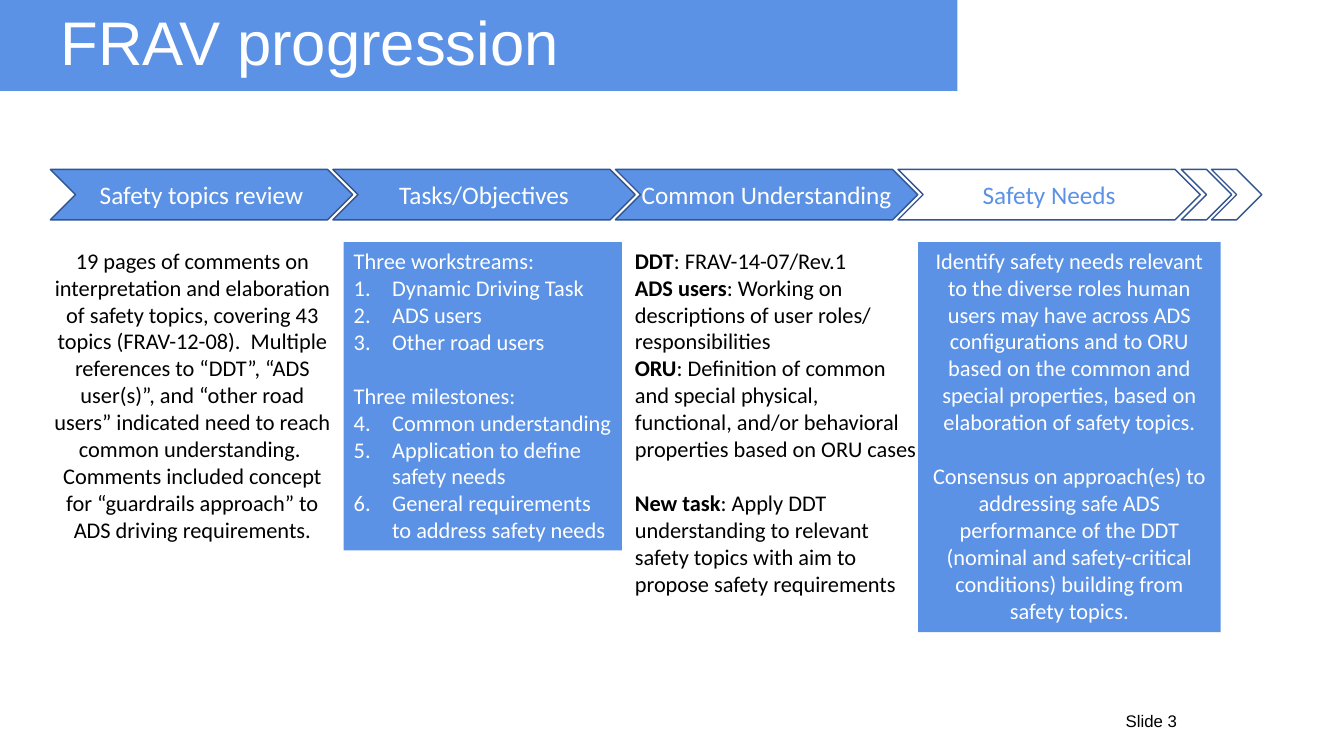
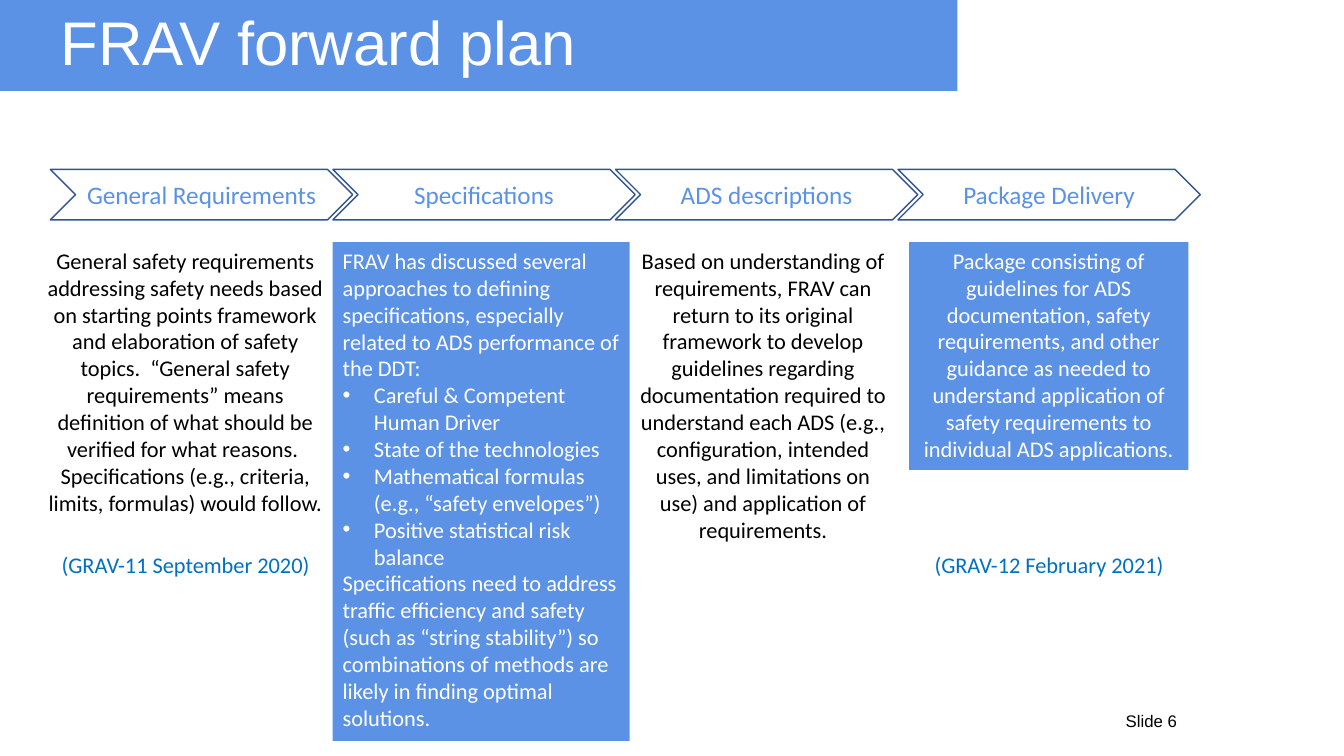
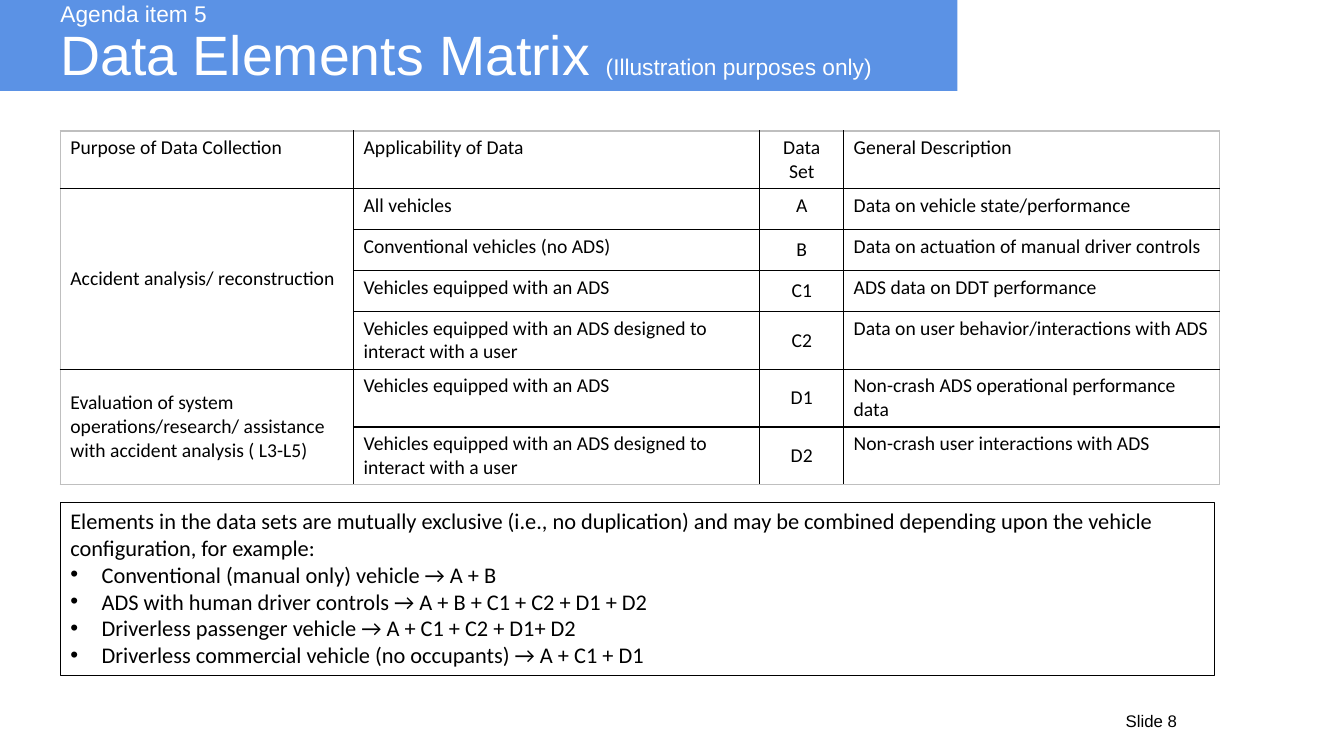
from typing import NamedTuple

from lxml.etree import SubElement
from pptx import Presentation
from pptx.dml.color import RGBColor
from pptx.enum.shapes import MSO_SHAPE
from pptx.enum.text import MSO_ANCHOR, MSO_AUTO_SIZE, PP_ALIGN
from pptx.oxml.ns import qn
from pptx.presentation import Presentation as Deck
from pptx.shapes.autoshape import Shape
from pptx.slide import Slide
from pptx.table import _Cell as Cell
from pptx.text.text import TextFrame, _Paragraph as Para
from pptx.util import Cm, Pt

BLUE, NAVY, AZURE = "5B92E5", "325491", "0070C0"
WHITE, BLACK, GREY = "FFFFFF", "000000", "BFBFBF"
SANS, HUMAN = "Arial", "Calibri"
LEFT, MID = PP_ALIGN.LEFT, PP_ALIGN.CENTER
GAP = 19.5
BREAK = "\n"


class Run(NamedTuple):
    """A stretch of text in one style."""
    text: str
    size: float = 16
    bold: bool = False


class Line(NamedTuple):
    """A paragraph: its runs, list mark and space before in points."""
    runs: tuple[Run, ...]
    mark: str = ""
    gap: float = 0


class Box(NamedTuple):
    """A block of text, placed in centimetres."""
    left: float
    width: float
    height: float
    lines: list[Line]
    fill: str = ""
    ink: str = BLACK
    align: PP_ALIGN = MID
    top: float = 6.1
    edge: str = ""
    wrap: bool = True
    list: bool = False


class Step(NamedTuple):
    """A chevron in the process row."""
    text: str
    done: bool = False


def plain(text: str, mark: str = "", gap: float = 0) -> Line:
    """Make a paragraph of one body run."""
    return Line((Run(text),), mark, gap)


def lead(head: str, text: str, gap: float = 0) -> Line:
    """Make a paragraph with a bold opening."""
    return Line((Run(head, bold=True), Run(text)), gap=gap)


def dots(*texts: str) -> list[Line]:
    """Make a bulleted list."""
    return [plain(text, "•") for text in texts]


def count(start: int, *texts: str) -> list[Line]:
    """Make a numbered list."""
    return [plain(text, str(start)) for text in texts]


def tint(code: str) -> RGBColor:
    """Turn a hex string into a colour."""
    return RGBColor.from_string(code)


def paint(shape: Shape, fill: str = "", edge: str = "", width: float = 1) -> None:
    """Set the fill and outline of a shape."""
    shape.shadow.inherit = False
    if fill:
        shape.fill.solid()
        shape.fill.fore_color.rgb = tint(fill)
    else:
        shape.fill.background()
    if edge:
        shape.line.color.rgb = tint(edge)
        shape.line.width = Pt(width)
    else:
        shape.line.fill.background()


def place(shape: Shape, left: float, top: float, width: float, height: float) -> None:
    """Move and size a shape in centimetres."""
    shape.left, shape.top = Cm(left), Cm(top)
    shape.width, shape.height = Cm(width), Cm(height)


def itemize(para: Para, mark: str) -> None:
    """Give a paragraph its bullet, number or neither."""
    props = para._p.get_or_add_pPr()
    hang = Cm({"": 0, "•": 0.79}.get(mark, 0.97))
    props.set("marL", str(hang))
    props.set("indent", str(-hang))
    if not mark:
        SubElement(props, qn("a:buNone"))
    elif mark == "•":
        SubElement(props, qn("a:buFont"), typeface=SANS)
        SubElement(props, qn("a:buChar"), char=mark)
    else:
        SubElement(props, qn("a:buAutoNum"), type="arabicPeriod", startAt=mark)


def write(frame: TextFrame, lines: list[Line], ink: str, align: PP_ALIGN = LEFT,
          font: str = HUMAN, space: float = 1) -> None:
    """Fill a text frame run by run."""
    for index, line in enumerate(lines):
        para = frame.add_paragraph() if index else frame.paragraphs[0]
        itemize(para, line.mark)
        para.alignment, para.line_spacing = align, space
        para.space_before = Pt(line.gap)
        for text, size, bold in line.runs:
            if text == BREAK:
                para.add_line_break()
                SubElement(para._p[-1], qn("a:rPr"), sz=str(round(size * 100)))
                continue
            run = para.add_run()
            run.text = text
            run.font.name, run.font.size, run.font.bold = font, Pt(size), bold
            run.font.color.rgb = tint(ink)


def settle(frame: TextFrame, anchor: MSO_ANCHOR, wrap: bool = True) -> None:
    """Set how text sits in its frame."""
    frame.auto_size = MSO_AUTO_SIZE.NONE
    frame.word_wrap, frame.vertical_anchor = wrap, anchor


def draw(slide: Slide, box: Box) -> None:
    """Draw a block of text."""
    spot = Cm(box.left), Cm(box.top), Cm(box.width), Cm(box.height)
    if box.list:
        shape = slide.placeholders[1]
        place(shape, box.left, box.top, box.width, box.height)
    elif box.fill:
        shape = slide.shapes.add_shape(MSO_SHAPE.RECTANGLE, *spot)
    else:
        shape = slide.shapes.add_textbox(*spot)
    paint(shape, box.fill, box.edge, 0.75)
    settle(shape.text_frame, MSO_ANCHOR.TOP, box.wrap)
    write(shape.text_frame, box.lines, box.ink, box.align)


def arrow(slide: Slide, left: float, width: float, step: Step) -> None:
    """Draw one chevron."""
    shape = slide.shapes.add_shape(MSO_SHAPE.CHEVRON, Cm(left), Cm(4.27), Cm(width), Cm(1.27))
    paint(shape, BLUE if step.done else WHITE, NAVY)
    if step.text:
        frame = shape.text_frame
        settle(frame, MSO_ANCHOR.MIDDLE)
        frame.margin_left = frame.margin_right = 0
        write(frame, [Line((Run(step.text, 18),))], WHITE if step.done else BLUE, MID)


def chain(slide: Slide, steps: list[Step], tails: int = 0) -> None:
    """Draw the row of chevrons and its short tails."""
    for index, step in enumerate(steps):
        arrow(slide, 1.27 + 7.12 * index, 7.62, step)
    for index in range(tails):
        arrow(slide, 29.77 + 0.76 * index, 1.27, Step(""))


def begin(deck: Deck, number: int, *title: Run) -> Slide:
    """Add a slide with its title and number."""
    slide = deck.slides.add_slide(deck.slide_layouts[1])
    head = slide.shapes.title
    place(head, 1.27, 0.13, 22.35, 2.03)
    settle(head.text_frame, MSO_ANCHOR.MIDDLE)
    write(head.text_frame, [Line(title)], WHITE, LEFT, SANS, 0.9)
    foot = slide.shapes.add_textbox(Cm(28.12), Cm(17.78), Cm(2.08), Cm(0.76))
    settle(foot.text_frame, MSO_ANCHOR.TOP, False)
    write(foot.text_frame, [Line((Run(f"Slide {number}", 12),))], BLACK, font=SANS)
    return slide


def brand(deck: Deck, slide: Slide) -> None:
    """Put the title band on the shared layout."""
    band = slide.shapes.add_shape(MSO_SHAPE.RECTANGLE, 0, 0, Cm(24.13), Cm(2.29))
    paint(band, BLUE)
    deck.slide_layouts[1].shapes._spTree.append(band._element)


def rule(cell: Cell, edges: dict[str, str]) -> None:
    """Set the borders of a cell."""
    props = cell._tc.get_or_add_tcPr()
    for side, code in edges.items():
        line = SubElement(props, qn(f"a:ln{side}"), w=str(Pt(1)))
        SubElement(SubElement(line, qn("a:solidFill")), qn("a:srgbClr"), val=code)


def matrix(slide: Slide, rows: list[tuple[str, ...]], widths: list[float],
           spans: list[tuple[int, int]]) -> None:
    """Draw a ruled table whose first column is merged."""
    tall, wide = len(rows), len(widths)
    frame = slide.shapes.add_table(tall, wide, Cm(1.52), Cm(3.3), Cm(sum(widths)), Cm(1.03 * tall))
    table = frame.table
    table.first_row = table.horz_banding = False
    for col, width in zip(table.columns, widths):
        col.width = Cm(width)
    for first, last in spans:
        table.cell(first, 0).merge(table.cell(last, 0))
    for y, row in enumerate(rows):
        for x, text in enumerate(row):
            cell = table.cell(y, x)
            end = y + (cell.span_height if cell.is_merge_origin else 1)
            outer = {"L": x == 0, "R": x == wide - 1, "T": y == 0, "B": end == tall}
            rule(cell, {side: GREY if out else BLACK for side, out in outer.items()})
            cell.fill.background()
            center = y > 0 and x == 0 or y > 1 and x == 2
            cell.vertical_anchor = MSO_ANCHOR.MIDDLE if center else MSO_ANCHOR.TOP
            if text:
                write(cell.text_frame, [Line((Run(text, 14),))], BLACK, MID if x == 2 else LEFT)


def progress(deck: Deck) -> None:
    """Build the progression slide."""
    slide = begin(deck, 3, Run("FRAV progression", 44))
    brand(deck, slide)
    chain(slide, [Step("Safety topics review", True), Step("Tasks/Objectives", True),
                  Step("Common Understanding", True), Step("Safety Needs")], 2)
    tasks = [
        plain("Three workstreams:"),
        *count(1, "Dynamic Driving Task", "ADS users", "Other road users"),
        plain("Three milestones:", gap=GAP),
        *count(4, "Common understanding", "Application to define safety needs",
               "General requirements to address safety needs"),
    ]
    shared = [
        lead("DDT", ": FRAV-14-07/Rev.1"),
        lead("ADS users", ": Working on descriptions of user roles/ responsibilities"),
        lead("ORU", ": Definition of common and special physical, functional, and/or "
             "behavioral properties based on ORU cases"),
        lead("New task", ": Apply DDT understanding to relevant safety topics with aim to "
             "propose safety requirements", GAP),
    ]
    needs = [
        plain("Identify safety needs relevant to the diverse roles human users may have across "
              "ADS configurations and to ORU based on the common and special properties, based "
              "on elaboration of safety topics."),
        plain("Consensus on approach(es) to addressing safe ADS performance of the DDT (nominal "
              "and safety-critical conditions) building from safety topics.", gap=GAP),
    ]
    review = [plain(
        "19 pages of comments on interpretation and elaboration of safety topics, covering 43 "
        "topics (FRAV-12-08).  Multiple references to “DDT”, “ADS user(s)”, and “other road "
        "users” indicated need to reach common understanding.  Comments included concept for "
        "“guardrails approach” to ADS driving requirements.")]
    for box in (Box(8.66, 7.01, 7.77, tasks, BLUE, WHITE, LEFT, list=True),
                Box(1.04, 7.62, 7.77, review),
                Box(15.75, 7.62, 9.83, shared, align=LEFT),
                Box(23.14, 7.62, 9.83, needs, BLUE, WHITE)):
        draw(slide, box)


def forward(deck: Deck) -> None:
    """Build the forward plan slide."""
    slide = begin(deck, 6, Run("FRAV forward plan", 44))
    chain(slide, [Step("General Requirements"), Step("Specifications"),
                  Step("ADS descriptions"), Step("Package Delivery")])
    specs = [
        plain("FRAV has discussed several approaches to defining specifications, especially "
              "related to ADS performance of the DDT:"),
        *dots("Careful & Competent Human Driver", "State of the technologies",
              "Mathematical formulas (e.g., “safety envelopes”)",
              "Positive statistical risk balance"),
        plain("Specifications need to address traffic efficiency and safety (such as “string "
              "stability”) so combinations of methods are likely in finding optimal solutions."),
    ]
    needs = [plain(
        "General safety requirements addressing safety needs based on starting points framework "
        "and elaboration of safety topics.  “General safety requirements” means definition of "
        "what should be verified for what reasons.  Specifications (e.g., criteria, limits, "
        "formulas) would follow.")]
    guides = [plain(
        "Based on understanding of requirements, FRAV can return to its original framework to "
        "develop guidelines regarding documentation required to understand each ADS (e.g., "
        "configuration, intended uses, and limitations on use) and application of requirements.")]
    package = [plain(
        "Package consisting of guidelines for ADS documentation, safety requirements, and other "
        "guidance as needed to understand application of safety requirements to individual ADS "
        "applications.")]
    for box in (Box(8.38, 7.49, 12.57, specs, BLUE, WHITE, LEFT, list=True),
                Box(0.86, 7.62, 7.09, needs),
                Box(22.91, 7.04, 5.74, package, BLUE, WHITE),
                Box(15.8, 6.86, 7.77, guides)):
        draw(slide, box)
    for left, width, date in ((1.24, 6.88, "(GRAV-11 September 2020)"),
                              (23.24, 6.4, "(GRAV-12 February 2021)")):
        draw(slide, Box(left, width, 0.94, [plain(date)], ink=AZURE, top=13.77, wrap=False))


def data(deck: Deck) -> None:
    """Build the data matrix slide."""
    slide = begin(deck, 8, Run("Agenda item 5", 16.2), Run(BREAK, 16.2),
                  Run("Data Elements Matrix ", 39.6), Run("(Illustration purposes only)", 16.2))
    ads = "Vehicles equipped with an ADS"
    user = f"{ads} designed to interact with a user"
    rows = [
        ("Purpose of Data Collection", "Applicability of Data", "Data Set", "General Description"),
        ("Accident analysis/ reconstruction", "All vehicles", "A",
         "Data on vehicle state/performance"),
        ("", "Conventional vehicles (no ADS)", "B", "Data on actuation of manual driver controls"),
        ("", ads, "C1", "ADS data on DDT performance"),
        ("", user, "C2", "Data on user behavior/interactions with ADS"),
        ("Evaluation of system operations/research/ assistance with accident analysis ( L3-L5)",
         ads, "D1", "Non-crash ADS operational performance data"),
        ("", user, "D2", "Non-crash user interactions with ADS"),
    ]
    matrix(slide, rows, [7.39, 10.24, 2.11, 9.47], [(1, 4), (5, 6)])
    sets = [
        plain("Elements in the data sets are mutually exclusive (i.e., no duplication) and may be "
              "combined depending upon the vehicle configuration, for example:"),
        *dots("Conventional (manual only) vehicle → A + B",
              "ADS with human driver controls → A + B + C1 + C2 + D1 + D2",
              "Driverless passenger vehicle → A + C1 + C2 + D1+ D2",
              "Driverless commercial vehicle (no occupants) → A + C1 + D1"),
    ]
    draw(slide, Box(1.52, 29.08, 4.37, sets, align=LEFT, top=12.65, edge=BLACK, list=True))


def main() -> None:
    """Build and save the deck."""
    deck = Presentation()
    deck.slide_width, deck.slide_height = Cm(33.87), Cm(19.05)
    for build in (progress, forward, data):
        build(deck)
    deck.save("out.pptx")


if __name__ == "__main__":
    main()
